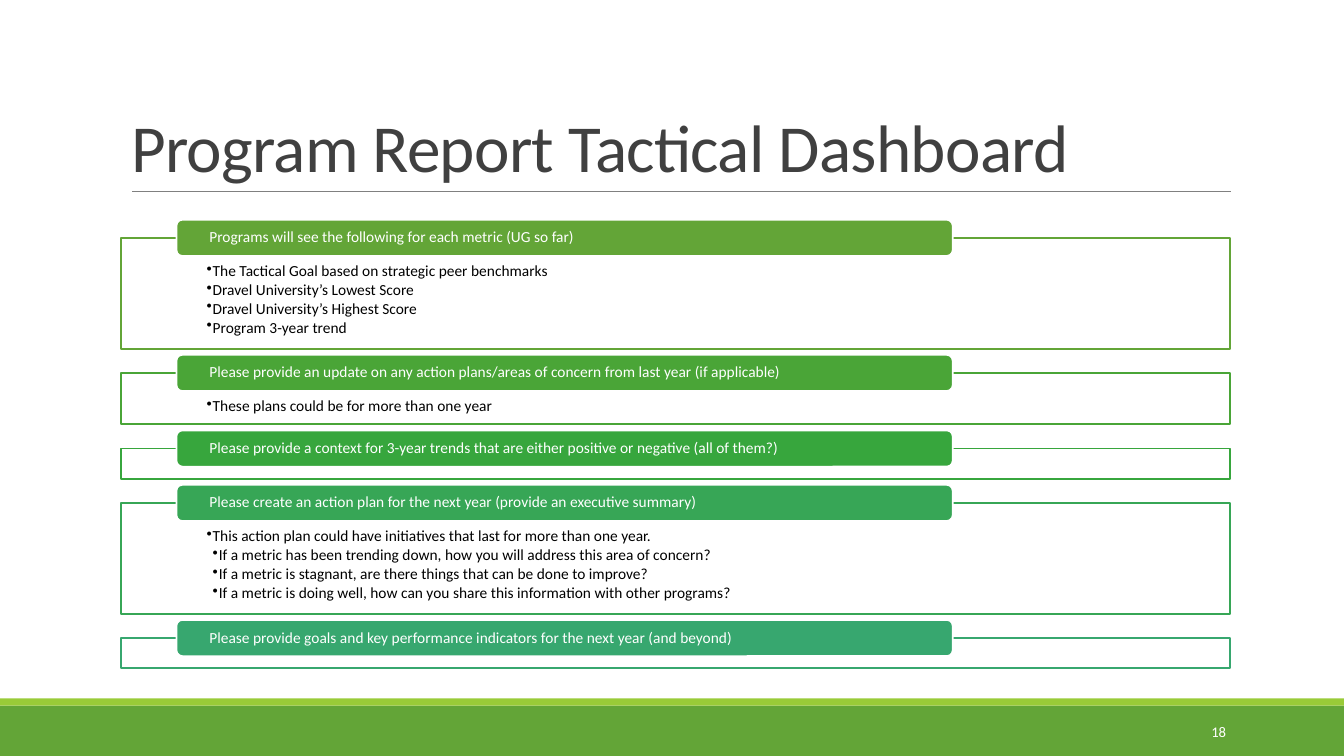
from dataclasses import dataclass

from lxml import etree
from pptx import Presentation
from pptx import util as u
from pptx.dml.color import RGBColor
from pptx.enum import shapes, text
from pptx.oxml import ns


@dataclass(frozen=True)
class Theme:
    """Colours, font and type sizes of the deck."""
    font: str = "Calibri"
    white: str = "FFFFFF"
    black: str = "000000"
    title: str = "404040"
    rule: str = "808080"
    base: str = "63A537"
    strip: str = "99CB38"
    big: float = 48
    body: float = 11
    small: float = 10.5


THEME = Theme()
BOX_GAP = 0.24

PANELS = [
    ("63A537", 1.1, "Programs will see the following for each metric (UG so far)",
     [(1, "The Tactical Goal based on strategic peer benchmarks"),
      (1, "Dravel University’s Lowest Score"),
      (1, "Dravel University’s Highest Score"),
      (1, "Program 3-year trend")]),
    ("4AA537", 0.51,
     "Please provide an update on any action plans/areas of concern from last year (if applicable)",
     [(1, "These plans could be for more than one year")]),
    ("37A63D", 0.3,
     "Please provide a context for 3-year trends that are either positive or negative (all of them?)",
     []),
    ("37A656", 1.1,
     "Please create an action plan for the next year (provide an executive summary)",
     [(1, "This action plan could have initiatives that last for more than one year."),
      (2, "If a metric has been trending down, how you will address this area of concern?"),
      (2, "If a metric is stagnant, are there things that can be done to improve?"),
      (2, "If a metric is doing well, how can you share this information with other programs?")]),
    ("37A76F", 0.3,
     "Please provide goals and key performance indicators for the next year (and beyond)",
     []),
]


def place(box):
    """Turn a box in inches into lengths."""
    return [u.Inches(side) for side in box]


def add_run(para, words, size, color):
    """Add one styled run to a paragraph."""
    run = para.add_run()
    run.text = words
    run.font.name = THEME.font
    run.font.size = u.Pt(size)
    run.font.color.rgb = RGBColor.from_string(color)
    return run


def set_frame(frame, anchor, pads):
    """Set wrap, anchor and left, top, right, bottom insets."""
    frame.word_wrap = True
    frame.auto_size = text.MSO_AUTO_SIZE.NONE
    frame.vertical_anchor = anchor
    (frame.margin_left, frame.margin_top,
     frame.margin_right, frame.margin_bottom) = place(pads)


def add_block(slide, kind, box, fill, line=None):
    """Add a flat shape, with an outline if a line colour is given."""
    block = slide.shapes.add_shape(kind, *place(box))
    block.shadow.inherit = False
    block.fill.solid()
    block.fill.fore_color.rgb = RGBColor.from_string(fill)
    if line:
        block.line.color.rgb = RGBColor.from_string(line)
        block.line.width = u.Pt(1.25)
    else:
        block.line.fill.background()
    return block


def set_bullet(para, level):
    """Give a paragraph a hanging bullet for its level."""
    props = para._p.get_or_add_pPr()
    props.set("marL", str(u.Inches(0.06 * level)))
    props.set("indent", str(u.Inches(-0.06)))
    etree.SubElement(props, ns.qn("a:buChar")).set("char", "•")


def add_panel(slide, box, color, head, points):
    """Draw an outlined box with its bullets and a heading tab on its top edge."""
    left, top = box[:2]
    frame = add_block(slide, shapes.MSO_SHAPE.RECTANGLE, box, THEME.white, color).text_frame
    set_frame(frame, text.MSO_ANCHOR.TOP, (0.85, 0.25, 0.85, 0.09))
    for order, (level, words) in enumerate(points):
        para = frame.add_paragraph() if order else frame.paragraphs[0]
        para.alignment = text.PP_ALIGN.LEFT
        para.level = level
        para.line_spacing = 0.9
        para.space_after = u.Pt(THEME.body * 0.15)
        set_bullet(para, level)
        add_run(para, words, THEME.body, THEME.black)

    tab = add_block(slide, shapes.MSO_SHAPE.ROUNDED_RECTANGLE,
                    (left + 0.55, top - 0.18, 7.7, 0.36), color, THEME.white)
    set_frame(tab.text_frame, text.MSO_ANCHOR.MIDDLE, (0.31, 0, 0.31, 0))
    para = tab.text_frame.paragraphs[0]
    para.alignment = text.PP_ALIGN.LEFT
    para.line_spacing = 0.9
    add_run(para, head, THEME.body, THEME.white)


def add_stack(slide, box):
    """Stack the panels down the box with equal gaps."""
    left, top, width = box
    for color, height, head, points in PANELS:
        add_panel(slide, (left, top, width, height), color, head, points)
        top += height + BOX_GAP


def add_title(slide, box, words):
    """Place the title in its box with a thin rule under it."""
    left, top, width, height = box
    title = slide.shapes.title
    title.left, title.top, title.width, title.height = place(box)
    set_frame(title.text_frame, text.MSO_ANCHOR.BOTTOM, (0.1, 0.05, 0.1, 0.05))
    para = title.text_frame.paragraphs[0]
    para.alignment = text.PP_ALIGN.LEFT
    para.line_spacing = 0.85
    run = add_run(para, words, THEME.big, THEME.title)
    run.font._element.set("spc", "-50")

    base = top + height
    ends = place((left + 0.11, base, left + width + 0.01, base))
    rule = slide.shapes.add_connector(shapes.MSO_CONNECTOR.STRAIGHT, *ends)
    rule.line.color.rgb = RGBColor.from_string(THEME.rule)
    rule.line.width = u.Pt(0.5)
    etree.SubElement(rule._element.spPr, ns.qn("a:effectLst"))


def add_foot(slide, box, number):
    """Draw the footer band, its bright strip and the page number."""
    left, top, width, height = box
    kind = shapes.MSO_SHAPE.RECTANGLE
    add_block(slide, kind, box, THEME.base)
    add_block(slide, kind, (left, top - 0.07, width, 0.07), THEME.strip)
    page = slide.shapes.add_textbox(*place((left + 10.83, top + 0.06, 1.43, 0.4)))
    set_frame(page.text_frame, text.MSO_ANCHOR.MIDDLE, (0.1, 0.05, 0.1, 0.05))
    para = page.text_frame.paragraphs[0]
    para.alignment = text.PP_ALIGN.RIGHT
    para.space_after = u.Pt(6)
    add_run(para, number, THEME.small, THEME.white)


def main():
    """Build the slide and save the deck."""
    deck = Presentation()
    deck.slide_width, deck.slide_height = place((13.33, 7.5))
    slide = deck.slides.add_slide(deck.slide_layouts[5])
    add_foot(slide, (0, 7, 13.33, 0.5), "18")
    add_title(slide, (1.2, 0.31, 11, 1.59), "Program Report Tactical Dashboard")
    add_stack(slide, (1.2, 2.36, 11))
    deck.save("out.pptx")


if __name__ == "__main__":
    main()
